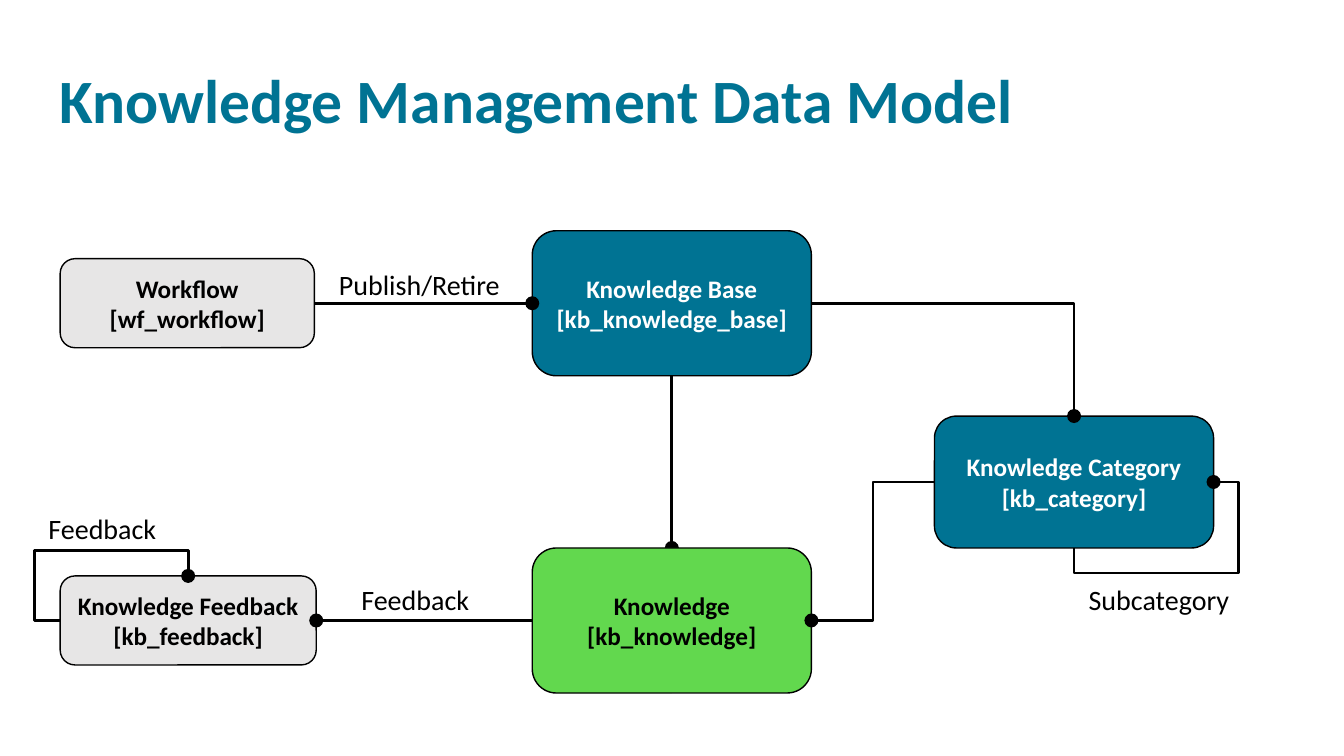
from dataclasses import dataclass
from math import cos, radians, sin

from lxml.etree import SubElement
from pptx import Presentation
from pptx.dml.color import RGBColor
from pptx.enum.shapes import MSO_CONNECTOR as CONN, MSO_SHAPE
from pptx.enum.text import MSO_ANCHOR, MSO_AUTO_SIZE, PP_ALIGN
from pptx.oxml.ns import qn
from pptx.shapes.autoshape import Shape
from pptx.shapes.connector import Connector
from pptx.slide import Slide
from pptx.util import Pt

TOP, LEFT, BOTTOM, RIGHT = range(4)


@dataclass(frozen=True)
class Theme:
    font: str = "Calibri"
    teal: str = "007393"
    green: str = "62D84E"
    grey: str = "E7E6E6"
    black: str = "000000"
    white: str = "FFFFFF"
    title: float = 44
    label: float = 20
    entity: float = 18
    outline: float = 1
    link: float = 2


THEME = Theme()


@dataclass(frozen=True)
class Entity:
    name: str
    table: str
    x: float
    y: float
    w: float
    h: float
    fill: str
    color: str = THEME.black

    def side(self, site: int) -> tuple[float, float]:
        fx, fy = ((0.5, 0), (0, 0.5), (0.5, 1), (1, 0.5))[site]
        return self.x + fx * self.w, self.y + fy * self.h


@dataclass(frozen=True)
class Link:
    begin: str
    begin_side: int
    end: str
    end_side: int
    behind: bool = False


@dataclass(frozen=True)
class Elbow:
    begin: str
    begin_side: int
    end: str
    end_side: int
    preset: str
    turn: int = 0
    adjust: tuple[float, ...] = ()


@dataclass(frozen=True)
class Label:
    text: str
    x: float
    y: float
    w: float


ENTITIES = [
    Entity("Knowledge Base", "kb_knowledge_base", 380.2, 164.8, 199.4, 103.6, THEME.teal, THEME.white),
    Entity("Knowledge Category", "kb_category", 667.5, 297.2, 199.4, 94.2, THEME.teal, THEME.white),
    Entity("Knowledge", "kb_knowledge", 380.2, 391.4, 199.4, 103.6, THEME.green),
    Entity("Workflow", "wf_workflow", 43, 184.8, 181.6, 63.6, THEME.grey),
    Entity("Knowledge Feedback", "kb_feedback", 43, 411.4, 182.9, 63.6, THEME.grey),
]
LINKS = [
    Link("Knowledge", TOP, "Knowledge Base", BOTTOM, behind=True),
    Link("Knowledge Base", LEFT, "Workflow", RIGHT),
    Link("Knowledge Feedback", RIGHT, "Knowledge", LEFT),
]
ELBOWS = [
    Elbow("Knowledge", RIGHT, "Knowledge Category", LEFT, "bentConnector3", 0, (0.5,)),
    Elbow("Knowledge Category", TOP, "Knowledge Base", RIGHT, "bentConnector2", 270),
    Elbow("Knowledge Category", RIGHT, "Knowledge Category", BOTTOM, "bentConnector4", 0, (-0.18, 1.38)),
    Elbow("Knowledge Feedback", TOP, "Knowledge Feedback", LEFT, "bentConnector4", 270, (-0.57, 1.2)),
]
LABELS = [
    Label("Publish/Retire", 235, 187.5, 131),
    Label("Subcategory", 770.5, 412.5, 122.5),
    Label("Feedback", 251, 412.5, 104),
    Label("Feedback", 27.5, 362, 107),
]


def rgb(color: str) -> RGBColor:
    return RGBColor.from_string(color)


def write(s: Shape, lines: list[str], size: float, color: str, bold: bool = False) -> None:
    tf = s.text_frame
    tf.word_wrap = True
    tf.text = "\n".join(lines)
    for p in tf.paragraphs:
        p.font.name = THEME.font
        p.font.size = Pt(size)
        p.font.bold = bold
        p.font.color.rgb = rgb(color)


def draw_entity(slide: Slide, entity: Entity) -> Shape:
    s = slide.shapes.add_shape(
        MSO_SHAPE.ROUNDED_RECTANGLE, Pt(entity.x), Pt(entity.y), Pt(entity.w), Pt(entity.h))
    s.shadow.inherit = False
    s.fill.solid()
    s.fill.fore_color.rgb = rgb(entity.fill)
    s.line.color.rgb = rgb(THEME.black)
    s.line.width = Pt(THEME.outline)
    write(s, [entity.name, f"[{entity.table}]"], THEME.entity, entity.color, bold=True)
    s.text_frame.vertical_anchor = MSO_ANCHOR.MIDDLE
    for p in s.text_frame.paragraphs:
        p.alignment = PP_ALIGN.CENTER
    return s


def style_link(c: Connector) -> None:
    c.line.color.rgb = rgb(THEME.black)
    c.line.width = Pt(THEME.link)
    properties = c._element.spPr
    SubElement(properties.find(qn("a:ln")), qn("a:headEnd"), type="oval", w="lg", len="lg")
    SubElement(properties, qn("a:effectLst"))


def draw_link(slide: Slide, link: Link, entities: dict[str, Entity], boxes: dict[str, Shape]) -> None:
    x1, y1 = entities[link.begin].side(link.begin_side)
    x2, y2 = entities[link.end].side(link.end_side)
    c = slide.shapes.add_connector(CONN.STRAIGHT, Pt(x1), Pt(y1), Pt(x2), Pt(y2))
    c.begin_connect(boxes[link.begin], link.begin_side)
    c.end_connect(boxes[link.end], link.end_side)
    style_link(c)
    if link.behind:
        boxes[link.begin]._element.addprevious(c._element)


def draw_elbow(slide: Slide, elbow: Elbow, entities: dict[str, Entity]) -> None:
    x1, y1 = entities[elbow.begin].side(elbow.begin_side)
    x2, y2 = entities[elbow.end].side(elbow.end_side)
    cx, cy = (x1 + x2) / 2, (y1 + y2) / 2
    angle = radians(-elbow.turn)
    dx = (x2 - cx) * cos(angle) - (y2 - cy) * sin(angle)
    dy = (x2 - cx) * sin(angle) + (y2 - cy) * cos(angle)
    c = slide.shapes.add_connector(CONN.ELBOW, Pt(cx - dx), Pt(cy - dy), Pt(cx + dx), Pt(cy + dy))
    style_link(c)
    properties = c._element.spPr
    if elbow.turn:
        properties.find(qn("a:xfrm")).set("rot", str(elbow.turn * 60000))
    geometry = properties.find(qn("a:prstGeom"))
    geometry.set("prst", elbow.preset)
    for i, value in enumerate(elbow.adjust, 1):
        SubElement(geometry.find(qn("a:avLst")), qn("a:gd"),
                   name=f"adj{i}", fmla=f"val {round(value * 100000)}")


def draw_label(slide: Slide, label: Label) -> None:
    s = slide.shapes.add_textbox(Pt(label.x), Pt(label.y), Pt(label.w), Pt(31.5))
    write(s, [label.text], THEME.label, THEME.black)
    s.text_frame.auto_size = MSO_AUTO_SIZE.SHAPE_TO_FIT_TEXT


def draw_title(slide: Slide, text: str) -> None:
    s = slide.shapes.add_textbox(Pt(35.3), Pt(46.8), Pt(762.5), Pt(67.7))
    write(s, [text], THEME.title, THEME.teal, bold=True)
    s.text_frame.paragraphs[0].line_spacing = 0.9


def main() -> None:
    prs = Presentation()
    prs.slide_width, prs.slide_height = Pt(960), Pt(540)
    slide = prs.slides.add_slide(prs.slide_layouts[6])
    draw_title(slide, "Knowledge Management Data Model")
    entities = {entity.name: entity for entity in ENTITIES}
    boxes = {entity.name: draw_entity(slide, entity) for entity in ENTITIES}
    for link in LINKS:
        draw_link(slide, link, entities, boxes)
    for elbow in ELBOWS:
        draw_elbow(slide, elbow, entities)
    for label in LABELS:
        draw_label(slide, label)
    prs.save("out.pptx")


if __name__ == "__main__":
    main()
